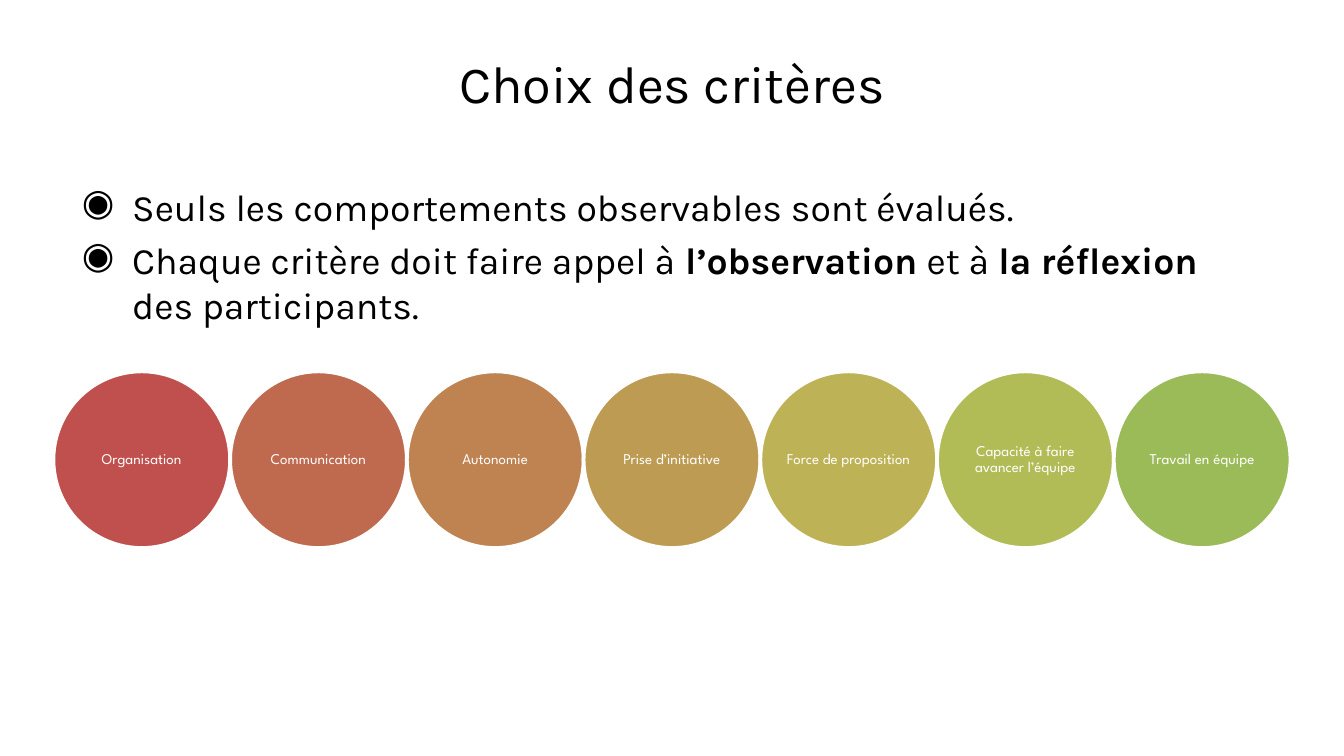
from dataclasses import dataclass

from lxml import etree
from pptx import Presentation
from pptx.dml.color import RGBColor
from pptx.enum.shapes import MSO_SHAPE
from pptx.enum.text import MSO_ANCHOR, PP_ALIGN
from pptx.oxml.ns import qn
from pptx.util import Cm, Pt

OVAL = MSO_SHAPE.OVAL
MIDDLE = MSO_ANCHOR.MIDDLE
CENTER = PP_ALIGN.CENTER


@dataclass(frozen=True)
class Theme:
    """Fonts, type sizes and colours of the slide."""
    text_font: str = "Karla"
    label_font: str = "League Spartan"
    title_size: Pt = Pt(28)
    body_size: Pt = Pt(20)
    label_size: Pt = Pt(8)
    bullet_gap: Pt = Pt(4.7)
    outline_width: Pt = Pt(2)
    ink: RGBColor = RGBColor(0, 0, 0)
    paper: RGBColor = RGBColor(255, 255, 255)


THEME = Theme()
SLIDE_WIDTH = 25.4
SLIDE_HEIGHT = 14.29
DIAMETER = 3.34
CIRCLE_TOP = 7.02

TITLE = "Choix des critères"
BULLETS = [
    [("Seuls les comportements observables sont évalués.", False)],
    [
        ("Chaque critère doit faire appel à ", False),
        ("l’observation", True),
        (" et à ", False),
        ("la réflexion ", True),
        ("des participants.", False),
    ],
]
CRITERIA = [
    ("Organisation", "C0504D"),
    ("Communication", "BF6A4F"),
    ("Autonomie", "BE8351"),
    ("Prise d’initiative", "BD9B53"),
    ("Force de proposition", "BDB255"),
    ("Capacité à faire avancer l’équipe", "B1BC57"),
    ("Travail en équipe", "9BBB59"),
]


def add_run(paragraph, text, font_name, size, color, bold=False):
    """Append one styled run to a paragraph."""
    run = paragraph.add_run()
    run.text = text
    run.font.name = font_name
    run.font.size = size
    run.font.bold = bold
    run.font.color.rgb = color


def add_text_frame(slide, left, top, width, height):
    """Add a wrapping text box and return its text frame."""
    text_box = slide.shapes.add_textbox(Cm(left), Cm(top), Cm(width), Cm(height))
    text_box.text_frame.word_wrap = True
    return text_box.text_frame


def set_bullet(paragraph):
    """Give a paragraph a hanging bullet."""
    properties = paragraph._p.get_or_add_pPr()
    properties.set("marL", str(Cm(0.95)))
    properties.set("indent", str(-Cm(0.95)))
    etree.SubElement(properties, qn("a:buChar")).set("char", "◉")


def add_title(slide):
    """Add the centred title."""
    paragraph = add_text_frame(slide, 0, 0.84, SLIDE_WIDTH, 0.97).paragraphs[0]
    paragraph.alignment = CENTER
    add_run(paragraph, TITLE, THEME.text_font, THEME.title_size, THEME.ink)


def add_bullets(slide):
    """Add the bulleted statements."""
    text_frame = add_text_frame(slide, 1.3, 3.35, 22.8, 3)
    for index, parts in enumerate(BULLETS):
        paragraph = text_frame.add_paragraph() if index else text_frame.paragraphs[0]
        set_bullet(paragraph)
        if index:
            paragraph.space_before = THEME.bullet_gap
        for text, bold in parts:
            add_run(paragraph, text, THEME.text_font, THEME.body_size, THEME.ink, bold)


def add_circle(shapes, left, label, color):
    """Add one labelled criterion circle."""
    circle = shapes.add_shape(OVAL, Cm(left), Cm(CIRCLE_TOP), Cm(DIAMETER), Cm(DIAMETER))
    circle.shadow.inherit = False
    circle.fill.solid()
    circle.fill.fore_color.rgb = RGBColor.from_string(color)
    circle.line.color.rgb = THEME.paper
    circle.line.width = THEME.outline_width
    text_frame = circle.text_frame
    text_frame.word_wrap = True
    text_frame.vertical_anchor = MIDDLE
    text_frame.margin_left = text_frame.margin_right = 0
    text_frame.margin_top = text_frame.margin_bottom = 0
    paragraph = text_frame.paragraphs[0]
    paragraph.alignment = CENTER
    paragraph.line_spacing = 0.9
    add_run(paragraph, label, THEME.label_font, THEME.label_size, THEME.paper)


def add_criteria(slide):
    """Add the centred row of touching circles as a group."""
    group = slide.shapes.add_group_shape()
    first_left = (SLIDE_WIDTH - len(CRITERIA) * DIAMETER) / 2
    for index, (label, color) in enumerate(CRITERIA):
        add_circle(group.shapes, first_left + index * DIAMETER, label, color)


def main():
    """Build and save the presentation."""
    presentation = Presentation()
    presentation.slide_width = Cm(SLIDE_WIDTH)
    presentation.slide_height = Cm(SLIDE_HEIGHT)
    slide = presentation.slides.add_slide(presentation.slide_layouts[6])
    add_bullets(slide)
    add_title(slide)
    add_criteria(slide)
    presentation.save("out.pptx")


if __name__ == "__main__":
    main()
